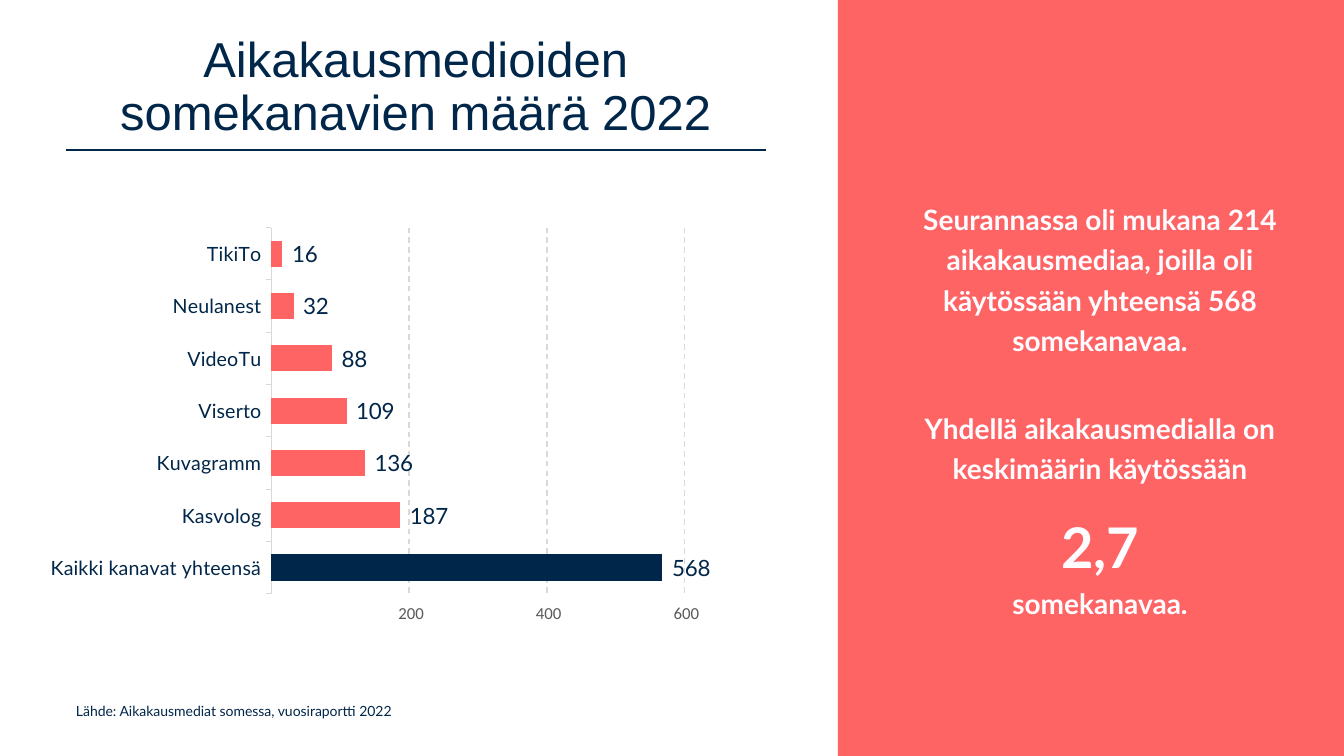
from lxml import etree
from pptx import Presentation, util as u
from pptx.chart.data import CategoryChartData
from pptx.dml.color import RGBColor
from pptx.enum import chart as ch, dml, shapes, text
from pptx.oxml.ns import qn

SCALE = 100.8  # px per inch
HEX = {"navy": "002649", "coral": "FF6464", "pale": "FEFCFF",
       "grid": "D9D9D9", "grey": "595959"}
FORM = r"#\ ##0;\-#\ ##0;;@"
DATA = [("Kaikki kanavat yhteensä", 568), ("Kasvolog", 187),
        ("Kuvagramm", 136), ("Viserto", 109), ("VideoTu", 88),
        ("Neulanest", 32), ("TikiTo", 16)]
FACTS = [
    ("Seurannassa oli mukana 214 aikakausmediaa, joilla oli "
     "käytössään yhteensä 568 somekanavaa.", 0),
    ("Yhdellä aikakausmedialla on keskimäärin käytössään", 34),
    ("2,7\vsomekanavaa.", 10),
]


def px(n):
    return u.Inches(n / SCALE)


def rgb(name):
    return RGBColor.from_string(HEX[name])


def style(font, size, color, name="Lato", bold=False):
    font.size, font.name, font.bold = u.Pt(size), name, bold
    font.color.rgb = rgb(color)


def add_box(slide, box):
    frame = slide.shapes.add_textbox(*map(px, box)).text_frame
    frame.word_wrap = True
    return frame


def add_head(slide, box):
    """Title with a rule along its lower edge."""
    x, y, w, h = box
    title = slide.shapes.title
    title.left, title.top, title.width, title.height = map(px, box)
    frame = title.text_frame
    frame.text = "Aikakausmedioiden somekanavien määrä 2022"
    frame.word_wrap = True
    frame.auto_size = text.MSO_AUTO_SIZE.NONE
    frame.vertical_anchor = text.MSO_ANCHOR.MIDDLE
    para = frame.paragraphs[0]
    para.alignment, para.line_spacing = text.PP_ALIGN.CENTER, 0.9
    style(para.runs[0].font, 35, "navy", "Arial")
    rule = slide.shapes.add_connector(
        shapes.MSO_CONNECTOR.STRAIGHT, px(x), px(y + h - 1), px(x + w), px(y + h - 1))
    rule.line.color.rgb, rule.line.width = rgb("navy"), u.Pt(1)
    etree.SubElement(rule._element.spPr, qn("a:effectLst"))


def add_panel(slide, box):
    """Coloured side panel with the key facts."""
    x, y, w, h = box
    panel = slide.shapes.add_shape(shapes.MSO_SHAPE.RECTANGLE, *map(px, box))
    panel.shadow.inherit = False
    panel.fill.solid()
    panel.fill.fore_color.rgb = rgb("coral")
    panel.line.fill.background()
    frame = add_box(slide, (x + 73, y + 151, w - 128, h - 242))
    frame.vertical_anchor = text.MSO_ANCHOR.MIDDLE
    for i, (fact, gap) in enumerate(FACTS):
        para = frame.add_paragraph() if i else frame.paragraphs[0]
        para.text = fact
        para.alignment, para.line_spacing = text.PP_ALIGN.CENTER, 1.2
        para.space_before = u.Pt(gap)
        for run in para.runs:
            style(run.font, 40 if run.text == "2,7" else 20, "pale", bold=True)


def set_plot(chart, x, y, w, h):
    """Fix the inner plot area, as fractions of the chart."""
    area = chart._chartSpace.chart.plotArea
    for old in area.findall(qn("c:layout")):
        area.remove(old)
    layout = etree.Element(qn("c:layout"))
    area.insert(0, layout)
    manual = etree.SubElement(layout, qn("c:manualLayout"))
    for tag, val in (("layoutTarget", "inner"), ("xMode", "edge"), ("yMode", "edge"),
                     ("x", x), ("y", y), ("w", w), ("h", h)):
        etree.SubElement(manual, qn("c:" + tag)).set("val", str(val))


def add_bars(slide, box):
    data = CategoryChartData()
    data.categories = [name for name, _ in DATA]
    data.add_series("Somekanavat", [val for _, val in DATA])
    chart = slide.shapes.add_chart(
        ch.XL_CHART_TYPE.BAR_CLUSTERED, *map(px, box), data).chart
    chart.has_legend = chart.has_title = False
    chart.font.size, chart.font.name = u.Pt(10), "Calibri"
    set_plot(chart, 0.324, 0.086, 0.493, 0.838)

    plot = chart.plots[0]
    plot.gap_width, plot.vary_by_categories = 100, False
    bars = plot.series[0]
    total = bars.points[0]
    for part, color in ((bars, "coral"), (total, "navy")):
        part.format.fill.solid()
        part.format.fill.fore_color.rgb = rgb(color)
    plot.has_data_labels = True
    tags = plot.data_labels
    tags.show_value = True
    tags.position = ch.XL_LABEL_POSITION.OUTSIDE_END
    tags.number_format, tags.number_format_is_linked = FORM, False
    style(tags.font, 16, "navy")

    cats, vals = chart.category_axis, chart.value_axis
    cats.has_major_gridlines = False
    cats.major_tick_mark = vals.major_tick_mark = ch.XL_TICK_MARK.OUTSIDE
    style(cats.tick_labels.font, 14, "navy")
    line = cats.format.line
    line.color.rgb, line.width = rgb("grid"), u.Pt(0.75)
    vals.minimum_scale, vals.maximum_scale, vals.major_unit = 0, 600, 200
    vals.format.line.fill.background()
    style(vals.tick_labels.font, 12, "grey", "Calibri")
    vals.tick_labels.number_format = FORM
    vals.tick_labels.number_format_is_linked = False
    grid = vals.major_gridlines.format.line
    grid.color.rgb, grid.width = rgb("grid"), u.Pt(1)
    grid.dash_style = dml.MSO_LINE.DASH


def add_note(slide, box):
    frame = add_box(slide, box)
    frame.text = "Lähde: Aikakausmediat somessa, vuosiraportti 2022"
    style(frame.paragraphs[0].runs[0].font, 10, "navy")


def main():
    deck = Presentation()
    deck.slide_width, deck.slide_height = px(1344), px(756)
    slide = deck.slides.add_slide(deck.slide_layouts[5])
    add_panel(slide, (838, 0, 506, 756))
    add_head(slide, (66, 25, 700, 126))
    add_bars(slide, (0, 190, 838, 437))
    add_note(slide, (66, 698, 663, 44))
    deck.save("out.pptx")


if __name__ == "__main__":
    main()
